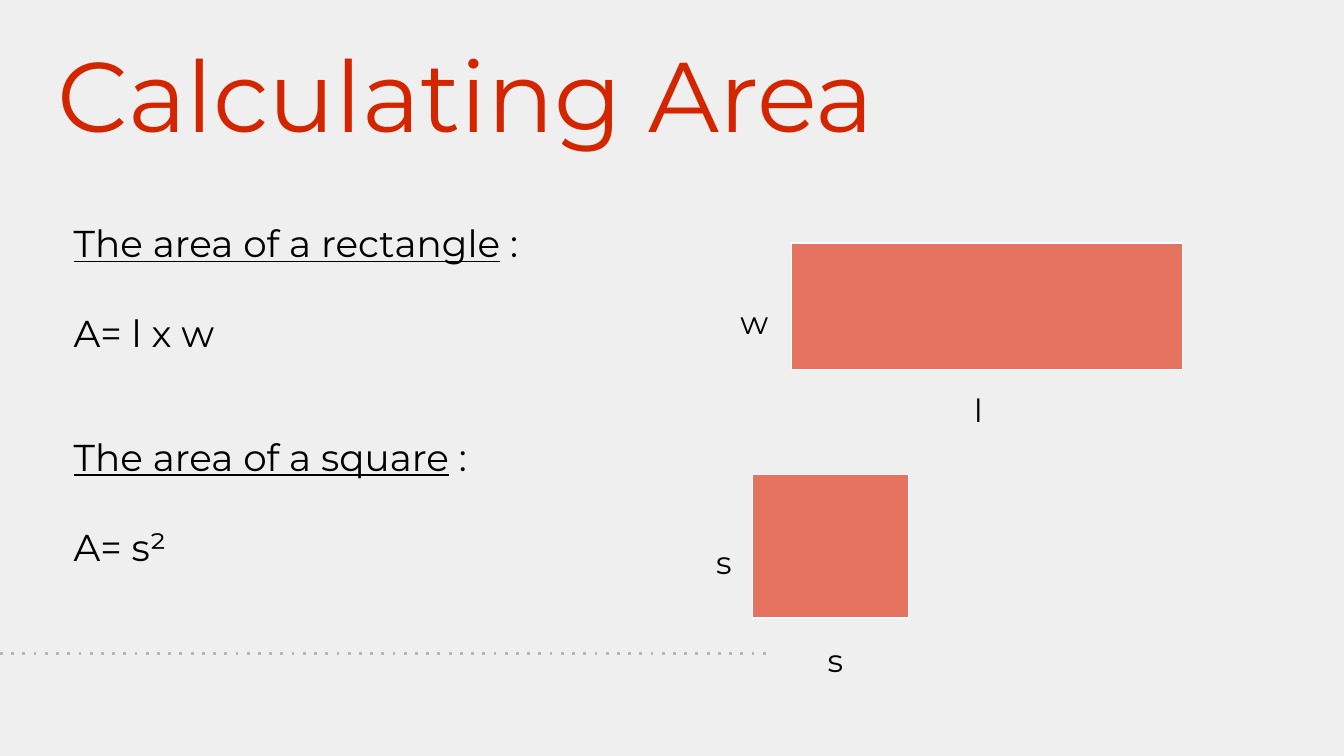
from dataclasses import dataclass

import pptx
import pptx.util
from lxml import etree
from pptx.dml.color import RGBColor
from pptx.enum.shapes import MSO_CONNECTOR, MSO_SHAPE
from pptx.enum.text import MSO_ANCHOR, MSO_AUTO_SIZE, PP_ALIGN
from pptx.oxml.ns import qn

Pt = pptx.util.Pt

BACKGROUND = RGBColor(0xEF, 0xEF, 0xEF)
RED = RGBColor(0xD3, 0x26, 0x00)
CORAL = RGBColor(0xE5, 0x73, 0x60)
BLACK = RGBColor(0x00, 0x00, 0x00)
WHITE = RGBColor(0xFF, 0xFF, 0xFF)
GREY = RGBColor(0xB7, 0xB7, 0xB7)
FONT = "Montserrat"
INSET = 7.2


@dataclass(frozen=True)
class Box:
    left: float
    top: float
    width: float
    height: float

    def lengths(self) -> list:
        return [Pt(v) for v in (self.left, self.top, self.width, self.height)]


@dataclass(frozen=True)
class Formula:
    heading: str
    rule: str
    top: float


@dataclass(frozen=True)
class Label:
    text: str
    box: Box


TITLE_BOX = Box(23.8, 28.1, 663.1, 94.3)
FORMULAS = [
    Formula("The area of a rectangle", "A= l x w", 110.9),
    Formula("The area of a square", "A= s²", 225.4),
]
FIGURES = [Box(424.1, 130.3, 209.5, 67.7), Box(403.2, 254.2, 83.5, 77)]
LABELS = [
    Label("s", Box(376.6, 283.7, 16.6, 18.7)),
    Label("s", Box(436.3, 336.2, 16.6, 18.7)),
    Label("l", Box(514.8, 202.3, 29.5, 18.7)),
    Label("w", Box(389.5, 154.8, 16.6, 22.3)),
]


def apply(target, values: dict) -> None:
    for name, value in values.items():
        setattr(target, name, value)


def format_frame(tf) -> None:
    apply(tf, {
        "word_wrap": True,
        "auto_size": MSO_AUTO_SIZE.NONE,
        "vertical_anchor": MSO_ANCHOR.TOP,
        "margin_left": Pt(INSET),
        "margin_top": Pt(INSET),
        "margin_right": Pt(INSET),
        "margin_bottom": Pt(INSET),
    })


def add_run(p, text: str, size: float, color: RGBColor = BLACK, underline: bool = False) -> None:
    r = p.add_run()
    r.text = text
    apply(r.font, {"name": FONT, "size": Pt(size), "underline": underline})
    r.font.color.rgb = color


def add_text_frame(s, box: Box):
    tf = s.shapes.add_textbox(*box.lengths()).text_frame
    format_frame(tf)
    return tf


def add_divider(s) -> None:
    sp = s.shapes.add_connector(MSO_CONNECTOR.STRAIGHT, Pt(0), Pt(350), Pt(411.8), Pt(350))
    sp.line.color.rgb = GREY
    sp.line.width = Pt(1.5)
    etree.SubElement(sp.line._get_or_add_ln(), qn("a:prstDash"), val="dot")
    etree.SubElement(sp._element.spPr, qn("a:effectLst"))


def set_title(s, text: str) -> None:
    sp = s.shapes.title
    apply(sp, dict(zip(("left", "top", "width", "height"), TITLE_BOX.lengths())))
    format_frame(sp.text_frame)
    p = sp.text_frame.paragraphs[0]
    apply(p, {"alignment": PP_ALIGN.LEFT, "line_spacing": 0.7})
    add_run(p, text, 53, RED)


def add_formula(s, formula: Formula) -> None:
    tf = add_text_frame(s, Box(32.4, formula.top, 264.2, 83.5))
    p = tf.paragraphs[0]
    add_run(p, formula.heading, 20, underline=True)
    add_run(p, " :", 20)
    p = tf.add_paragraph()
    p.space_before = Pt(24)
    add_run(p, formula.rule, 20)


def add_figure(s, box: Box) -> None:
    sp = s.shapes.add_shape(MSO_SHAPE.RECTANGLE, *box.lengths())
    sp.shadow.inherit = False
    sp.fill.solid()
    sp.fill.fore_color.rgb = CORAL
    sp.line.color.rgb = WHITE
    sp.line.width = Pt(0.75)


def add_label(s, label: Label) -> None:
    tf = add_text_frame(s, label.box)
    add_run(tf.paragraphs[0], label.text, 17)


def main() -> None:
    prs = pptx.Presentation()
    apply(prs, {"slide_width": Pt(720), "slide_height": Pt(405)})
    s = prs.slides.add_slide(prs.slide_layouts[5])
    s.background.fill.solid()
    s.background.fill.fore_color.rgb = BACKGROUND
    add_divider(s)
    set_title(s, "Calculating Area")
    for formula in FORMULAS:
        add_formula(s, formula)
    for box in FIGURES:
        add_figure(s, box)
    for label in LABELS:
        add_label(s, label)
    prs.save("out.pptx")


if __name__ == "__main__":
    main()
